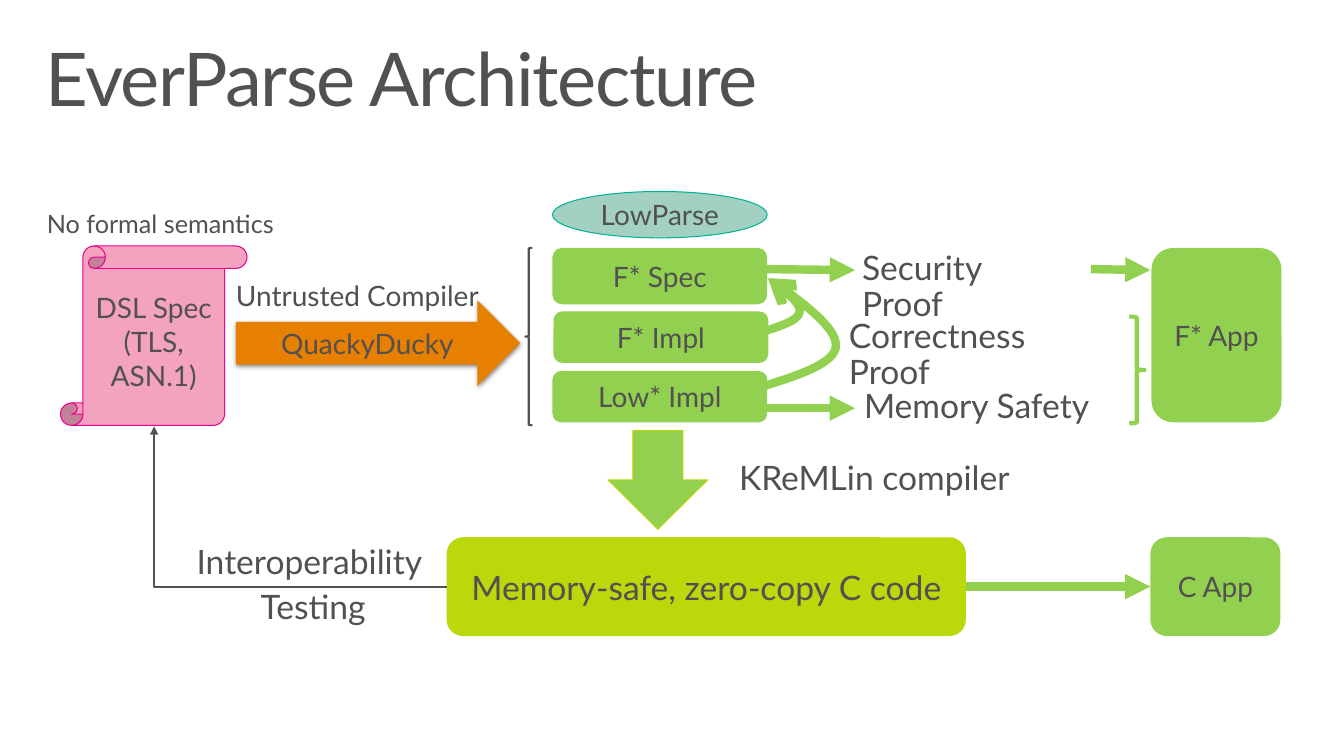
from lxml import etree
from pptx import Presentation
from pptx.dml.color import RGBColor
from pptx.enum.shapes import MSO_CONNECTOR, MSO_SHAPE
from pptx.enum.text import MSO_ANCHOR, PP_ALIGN
from pptx.oxml.ns import qn
from pptx.util import Inches, Pt

ROUNDED = MSO_SHAPE.ROUNDED_RECTANGLE
BRACE = MSO_SHAPE.LEFT_BRACE
STRAIGHT, ELBOW = MSO_CONNECTOR.STRAIGHT, MSO_CONNECTOR.ELBOW
TOP, MIDDLE = MSO_ANCHOR.TOP, MSO_ANCHOR.MIDDLE
LEFT, CENTER = PP_ALIGN.LEFT, PP_ALIGN.CENTER
FONT = "Lato"
GRAY, GREEN, LIME = "525051", "92D050", "BAD80A"
CURVE_STEPS = 24


def rgb(value):
    """Turn a hex string into a colour."""
    return RGBColor.from_string(value)


def set_frame(frame, margins, anchor):
    """Set wrapping, margins (left, top, right, bottom) and anchor."""
    frame.word_wrap = True
    frame.vertical_anchor = anchor
    frame.margin_left, frame.margin_top, frame.margin_right, frame.margin_bottom = map(Inches, margins)


def add_run(paragraph, text, size):
    """Add one formatted run to a paragraph."""
    run = paragraph.add_run()
    run.text = text
    run.font.name = FONT
    run.font.size = Pt(size)
    run.font.color.rgb = rgb(GRAY)
    return run


def write_paragraphs(frame, texts, size, alignments, spacing=None, after=None):
    """Write paragraphs, breaking lines at newlines inside them."""
    for index, (text, alignment) in enumerate(zip(texts, alignments)):
        paragraph = frame.paragraphs[0] if index == 0 else frame.add_paragraph()
        paragraph.alignment = alignment
        paragraph.line_spacing = spacing
        paragraph.space_after = after
        for number, line in enumerate(text.split("\n")):
            if number:
                paragraph.add_line_break()
            add_run(paragraph, line, size)


def set_line(shape, color, width):
    """Give a shape or connector a solid line."""
    shape.line.color.rgb = rgb(color)
    shape.line.width = Pt(width)


def add_arrowhead(shape, kind):
    """Put an arrowhead at the end of a line."""
    line = shape._element.spPr.find(qn("a:ln"))
    etree.SubElement(line, qn("a:tailEnd"), type=kind)


def add_title(slide, text):
    """Place and format the slide title."""
    title = slide.shapes.title
    title.left, title.top, title.width, title.height = map(Inches, (0.29, 0.32, 12.75, 0.98))
    set_frame(title.text_frame, (0.16, 0.1, 0.16, 0.1), TOP)
    paragraph = title.text_frame.paragraphs[0]
    paragraph.alignment = LEFT
    paragraph.line_spacing = 0.9
    run = add_run(paragraph, text, 52.9)
    run.font._element.set("spc", "-100")


def add_block(slide, kind, box, fill=None, line=None, texts=(), size=20):
    """Add a preset shape with centred text."""
    shape = slide.shapes.add_shape(kind, *map(Inches, box))
    shape.shadow.inherit = False
    if fill:
        shape.fill.solid()
        shape.fill.fore_color.rgb = rgb(fill)
    else:
        shape.fill.background()
    if line:
        set_line(shape, *line)
    else:
        shape.line.fill.background()
    set_frame(shape.text_frame, (0, 0.05, 0, 0.05), MIDDLE)
    write_paragraphs(shape.text_frame, texts, size, [CENTER] * len(texts))
    return shape


def add_drop_shadow(shape):
    """Give a shape a soft shadow straight below it."""
    effects = shape._element.spPr.find(qn("a:effectLst"))
    shadow = etree.SubElement(effects, qn("a:outerShdw"), blurRad=str(Pt(3.5)),
                              dist=str(Pt(1.1)), dir="5400000", rotWithShape="0")
    color = etree.SubElement(shadow, qn("a:srgbClr"), val="000000")
    etree.SubElement(color, qn("a:alpha"), val="45000")


def add_label(slide, box, texts, size=24, alignments=(LEFT,), right=0.16):
    """Add a free-standing label."""
    label = slide.shapes.add_textbox(*map(Inches, box))
    set_frame(label.text_frame, (0.2, 0.16, right, 0.16), TOP)
    write_paragraphs(label.text_frame, texts, size, alignments, 0.9, Pt(6))


def add_arrow(slide, start, end, color=GREEN, width=6, kind=STRAIGHT):
    """Add a connector that ends in a triangle."""
    connector = slide.shapes.add_connector(kind, *map(Inches, (*start, *end)))
    set_line(connector, color, width)
    add_arrowhead(connector, "triangle")
    properties = connector._element.spPr
    etree.SubElement(properties, qn("a:effectLst"))
    if kind == ELBOW:
        properties.find(qn("a:prstGeom")).set("prst", "bentConnector2")
    return connector


def bezier_points(start, first, second, end):
    """Return points along a cubic curve, in EMU."""
    points = []
    for step in range(CURVE_STEPS + 1):
        t = step / CURVE_STEPS
        weights = ((1 - t) ** 3, 3 * t * (1 - t) ** 2, 3 * t * t * (1 - t), t ** 3)
        corners = (start, first, second, end)
        points.append(tuple(
            Inches(sum(weight * corner[axis] for weight, corner in zip(weights, corners)))
            for axis in (0, 1)))
    return points


def add_curved_arrow(slide, *curves):
    """Draw joined cubic curves as one arrow."""
    points = [point for curve in curves for point in bezier_points(*curve)]
    builder = slide.shapes.build_freeform(*points[0])
    builder.add_line_segments(points[1:], close=False)
    shape = builder.convert_to_shape()
    shape.shadow.inherit = False
    shape.fill.background()
    set_line(shape, GREEN, 6)
    add_arrowhead(shape, "arrow")


def add_source_side(slide):
    """Add the format description and its compiler."""
    add_block(slide, MSO_SHAPE.VERTICAL_SCROLL, (0.6, 2.44, 1.85, 1.78), "F3A2BF",
              ("EC008C", 0.75), ("DSL Spec", "(TLS,\nASN.1)"))
    compiler = add_block(slide, MSO_SHAPE.RIGHT_ARROW, (2.34, 2.98, 2.82, 0.85), "E77F00",
                         texts=("QuackyDucky",))
    add_drop_shadow(compiler)
    add_label(slide, (2.14, 2.65, 2.84, 0.63), ("Untrusted Compiler",), 20)
    add_label(slide, (0.19, 1.97, 2.8, 0.6), ("No formal semantics",), 18, (CENTER,), 0.2)


def add_proof_side(slide):
    """Add the verified layers, their proofs and the F* application."""
    add_block(slide, MSO_SHAPE.OVAL, (5.48, 1.9, 2.13, 0.46), "A2D1C2", ("00B294", 0.75), ("LowParse",))
    for text, left, top, height in (("F* Spec", 5.48, 2.46, 0.56), ("F* Impl", 5.49, 3.09, 0.51),
                                    ("Low* Impl", 5.48, 3.68, 0.51)):
        add_block(slide, ROUNDED, (left, top, 2.13, height), GREEN, texts=(text,))
    add_block(slide, BRACE, (5.21, 2.46, 0.07, 1.76), line=(GRAY, 1.5))
    add_curved_arrow(slide, ((7.58, 3.83), (7.93, 3.72), (8.29, 3.6), (8.29, 3.43)),
                     ((8.29, 3.43), (8.3, 3.25), (7.96, 3), (7.62, 2.76)))
    add_curved_arrow(slide, ((7.6, 3.28), (7.76, 3.23), (7.93, 3.17), (7.93, 3.09)),
                     ((7.93, 3.09), (7.94, 3), (7.78, 2.88), (7.62, 2.77)))
    add_label(slide, (8.22, 3.01, 3.03, 0.69), ("Correctness Proof",), right=0.6)
    add_label(slide, (8.35, 2.33, 2.47, 0.69), ("Security Proof",), right=0.6)
    add_label(slide, (8.37, 3.7, 2.66, 0.69), ("Memory Safety",))
    add_block(slide, ROUNDED, (11.42, 2.46, 1.29, 1.73), GREEN, texts=("F* App",))
    for start, end in (((7.6, 2.67), (8.48, 2.68)), ((7.6, 4.05), (8.48, 4.05)),
                       ((10.82, 2.67), (11.41, 2.68))):
        add_arrow(slide, start, end)
    brace = add_block(slide, BRACE, (11.2, 3.14, 0.15, 1.06), line=(GREEN, 3))
    brace.rotation = 180


def add_code_row(slide):
    """Add the generated code, its testing loop and the C application."""
    add_block(slide, MSO_SHAPE.DOWN_ARROW, (6.03, 4.27, 0.99, 0.98), GREEN, (LIME, 0.75))
    add_label(slide, (7.13, 4.42, 3.09, 0.69), ("KReMLin compiler",))
    code = add_block(slide, ROUNDED, (4.43, 5.33, 5.15, 0.98), LIME,
                     texts=("Memory-safe, zero-copy C code",), size=24)
    application = add_block(slide, ROUNDED, (11.41, 5.33, 1.29, 0.98), GREEN, texts=("C App",))
    link = add_arrow(slide, (9.58, 5.82), (11.41, 5.82))
    link.begin_connect(code, 3)
    link.end_connect(application, 1)
    add_arrow(slide, (4.43, 5.82), (1.53, 4.23), GRAY, 1.5, ELBOW)
    add_label(slide, (1.75, 5.25, 2.67, 1.13), ("Interoperability", "Testing"),
              alignments=(LEFT, CENTER))


def main():
    """Build the slide and save it."""
    presentation = Presentation()
    presentation.slide_width, presentation.slide_height = Inches(13.33), Inches(7.5)
    slide = presentation.slides.add_slide(presentation.slide_layouts[5])
    add_title(slide, "EverParse Architecture")
    add_source_side(slide)
    add_proof_side(slide)
    add_code_row(slide)
    presentation.save("out.pptx")


if __name__ == "__main__":
    main()
